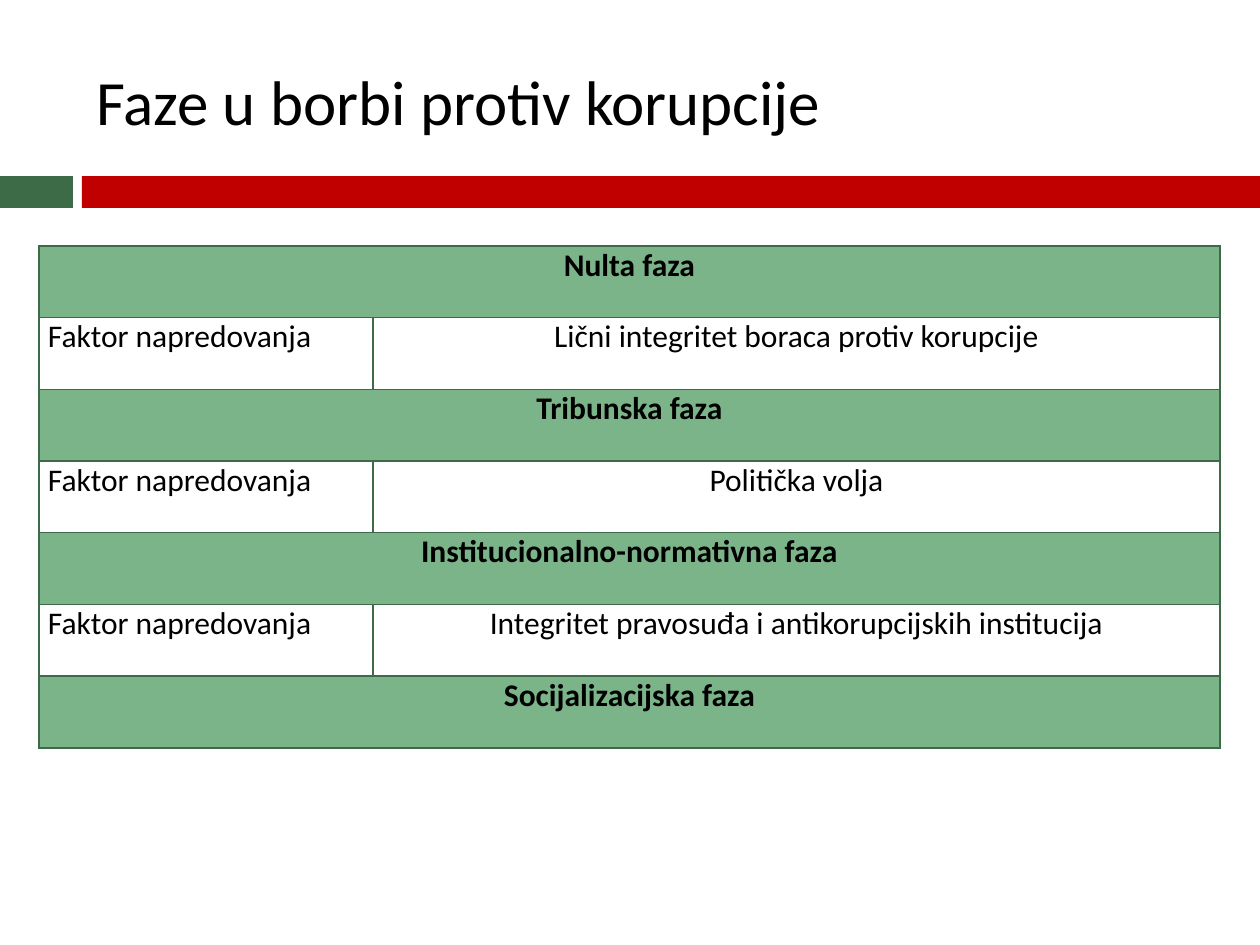
from lxml import etree
from pptx import Presentation
from pptx.dml.color import RGBColor
from pptx.enum.shapes import MSO_SHAPE
from pptx.enum.text import MSO_ANCHOR, MSO_AUTO_SIZE, PP_ALIGN
from pptx.oxml.ns import qn
from pptx.util import Emu, Pt

RECT = MSO_SHAPE.RECTANGLE
TOP, MIDDLE = MSO_ANCHOR.TOP, MSO_ANCHOR.MIDDLE
FIXED = MSO_AUTO_SIZE.NONE
LEFT, CENTER, JUSTIFY = PP_ALIGN.LEFT, PP_ALIGN.CENTER, PP_ALIGN.JUSTIFY

BLACK = RGBColor(0x00, 0x00, 0x00)
WHITE = RGBColor(0xFF, 0xFF, 0xFF)
RED = RGBColor(0xC0, 0x00, 0x00)
DARK = RGBColor(0x3D, 0x6B, 0x48)
GREEN = RGBColor(0x7C, 0xB4, 0x8A)

FACTOR = "Faktor napredovanja"
ROWS = [
    ("Nulta faza",),
    (FACTOR, "Lični integritet boraca protiv korupcije"),
    ("Tribunska faza",),
    (FACTOR, "Politička volja"),
    ("Institucionalno-normativna faza",),
    (FACTOR, "Integritet pravosuđa i antikorupcijskih institucija"),
    ("Socijalizacijska faza",),
]


def px(count):
    return Emu(round(count * 914400 / 126))


class Deck:
    face = "Calibri"

    def __init__(self):
        self.file = Presentation()
        self.file.slide_width, self.file.slide_height = px(1260), px(945)
        self.slide = self.file.slides.add_slide(self.file.slide_layouts[5])

    def label(self, frame, text, size, align, bold=False):
        frame.text = text
        para = frame.paragraphs[0]
        para.alignment = align
        for run in para.runs:
            font = run.font
            font.name, font.size, font.bold = self.face, Pt(size), bold
            font.color.rgb = BLACK

    def bar(self, left, top, width, height, color):
        shape = self.slide.shapes.add_shape(
            RECT, px(left), px(top), px(width), px(height))
        shape.shadow.inherit = False
        shape.fill.solid()
        shape.fill.fore_color.rgb = color
        shape.line.fill.background()

    def title(self, text, left, top, width, height):
        shape = self.slide.shapes.title
        shape.left, shape.top = px(left), px(top)
        shape.width, shape.height = px(width), px(height)
        frame = shape.text_frame
        frame.auto_size = FIXED
        frame.vertical_anchor = MIDDLE
        self.label(frame, text, 36, LEFT)

    def border(self, cell):
        props = cell._tc.get_or_add_tcPr()
        for side in ("lnL", "lnR", "lnT", "lnB"):
            line = etree.SubElement(props, qn(f"a:{side}"), w=str(Pt(1)))
            fill = etree.SubElement(line, qn("a:solidFill"))
            etree.SubElement(fill, qn("a:srgbClr"), val=str(DARK))

    def cell(self, cell, text, align, color, bold):
        cell.margin_left = cell.margin_right = px(9)
        cell.margin_top = cell.margin_bottom = 0
        cell.vertical_anchor = TOP
        cell.fill.solid()
        cell.fill.fore_color.rgb = color
        self.label(cell.text_frame, text, 18, align, bold)

    def table(self, rows, left, top, widths, height):
        table = self.slide.shapes.add_table(
            len(rows), len(widths), px(left), px(top),
            px(sum(widths)), px(height)).table
        table.first_row = table.horz_banding = False
        for col, width in zip(table.columns, widths):
            col.width = px(width)
        for cell in table.iter_cells():
            self.border(cell)
        for index, row in enumerate(rows):
            first, last = table.cell(index, 0), table.cell(index, 1)
            if len(row) == 1:
                first.merge(last)
                self.cell(first, row[0], CENTER, GREEN, True)
            else:
                align = LEFT if index == 1 else JUSTIFY
                self.cell(first, row[0], align, WHITE, False)
                self.cell(last, row[1], CENTER, WHITE, False)


def main():
    deck = Deck()
    deck.bar(0, 176, 73, 32, DARK)
    deck.bar(82, 176, 1178, 32, RED)
    deck.title("Faze u borbi protiv korupcije", 84, 32, 1124, 136)
    deck.table(ROWS, 39, 246, (334, 847), 502)
    deck.file.save("out.pptx")


if __name__ == "__main__":
    main()
